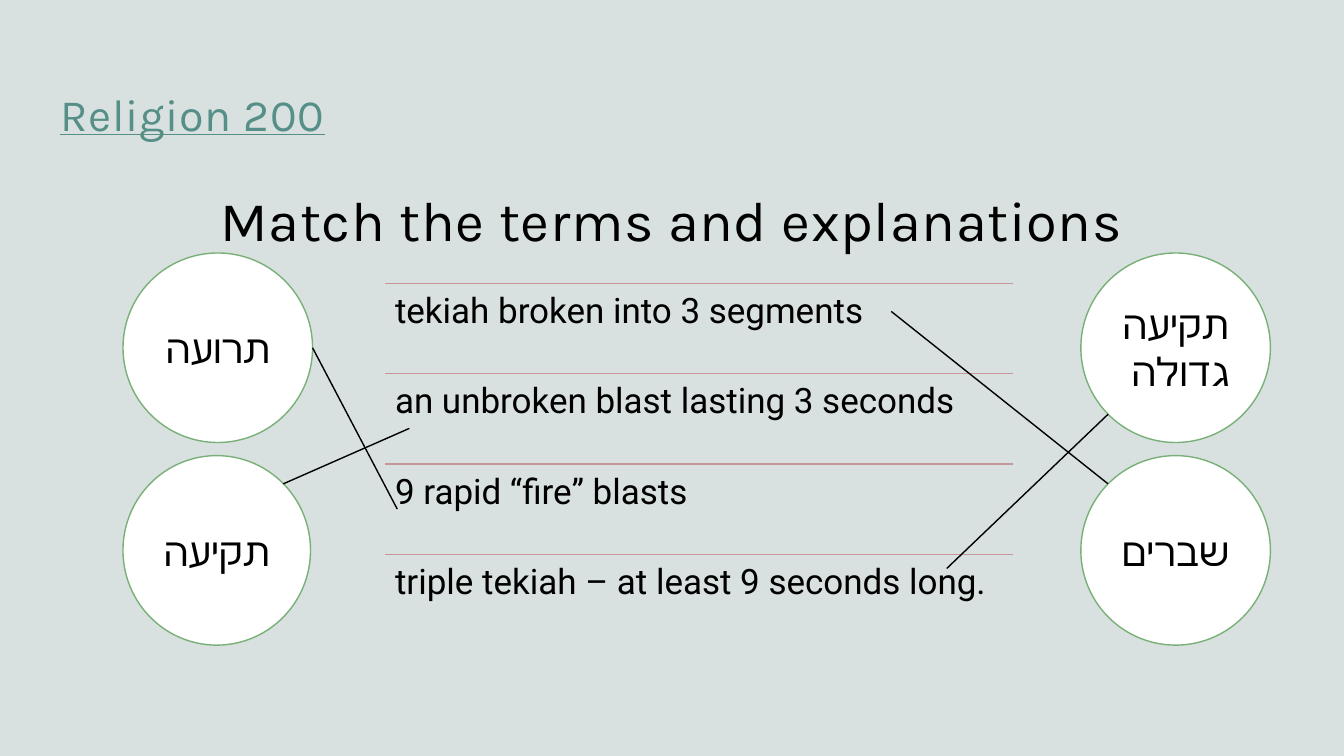
from pptx import Presentation
from pptx.dml.color import RGBColor
from pptx.enum.shapes import MSO_CONNECTOR, MSO_SHAPE
from pptx.enum.text import MSO_ANCHOR, PP_ALIGN
from pptx.oxml.ns import qn
from pptx.util import Inches, Pt
from lxml import etree

LEFT, CENTER = PP_ALIGN.LEFT, PP_ALIGN.CENTER
TOP, MIDDLE = MSO_ANCHOR.TOP, MSO_ANCHOR.MIDDLE
STRAIGHT, OVAL = MSO_CONNECTOR.STRAIGHT, MSO_SHAPE.OVAL
COLORS = {"back": "D8E1DF", "title": "568E88", "text": "000000",
          "circle": "FFFFFF", "outline": "79B078", "rule": "C6969B"}


class MatchingSlide:
    """Draws the elements of a matching exercise in one style."""

    def __init__(self, prs):
        self.s = prs.slides.add_slide(prs.slide_layouts[5])
        fill = self.s.background.fill
        fill.solid()
        fill.fore_color.rgb = self.color("back")

    def color(self, name):
        return RGBColor.from_string(COLORS[name])

    def set_text(self, sp, text, size, font, color="text", align=LEFT,
                 anchor=TOP, spacing=1.0, tracking=0, rtl=False):
        tf = sp.text_frame
        tf.word_wrap = True
        tf.vertical_anchor = anchor
        tf.text = text
        p = tf.paragraphs[0]
        p.alignment = align
        p.line_spacing = spacing
        if rtl:
            p._p.get_or_add_pPr().set("rtl", "1")
        r = p.runs[0]
        r.font.size = Pt(size)
        r.font.name = font
        r.font.color.rgb = self.color(color)
        rPr = r._r.get_or_add_rPr()
        if tracking:
            rPr.set("spc", str(tracking))
        if rtl:
            etree.SubElement(rPr, qn("a:cs")).set("typeface", font)
        return r

    def title(self, text, x, y, w, h):
        sp = self.s.shapes.title
        sp.left, sp.top, sp.width, sp.height = map(Inches, (x, y, w, h))
        r = self.set_text(sp, text, 32, "Karla", "title", anchor=MIDDLE, tracking=50)
        r.font.underline = True

    def text(self, text, x, y, w, h, size, font, inset=0.05, **style):
        sp = self.s.shapes.add_textbox(*map(Inches, (x, y, w, h)))
        tf = sp.text_frame
        tf.margin_top = tf.margin_bottom = Inches(inset)
        self.set_text(sp, text, size, font, **style)

    def circle(self, text, x, y, w, font="Roboto"):
        sp = self.s.shapes.add_shape(OVAL, *map(Inches, (x, y, w, 1.88)))
        sp.shadow.inherit = False
        sp.fill.solid()
        sp.fill.fore_color.rgb = self.color("circle")
        sp.line.color.rgb = self.color("outline")
        sp.line.width = Pt(1)
        self.set_text(sp, text, 28, font, align=CENTER, anchor=MIDDLE, rtl=True)

    def line(self, x1, y1, x2, y2, color="text"):
        sp = self.s.shapes.add_connector(STRAIGHT, *map(Inches, (x1, y1, x2, y2)))
        sp.line.color.rgb = self.color(color)
        sp.line.width = Pt(1)
        etree.SubElement(sp._element.spPr, qn("a:effectLst"))


def main():
    prs = Presentation()
    prs.slide_width, prs.slide_height = Inches(13.33), Inches(7.5)
    slide = MatchingSlide(prs)
    slide.title("Religion 200", 0.5, 0.4, 11.92, 1.45)
    slide.text("Match the terms and explanations", 0.5, 1.64, 12.33, 1, 40, "Karla",
               align=CENTER, anchor=MIDDLE, spacing=1.1, tracking=50)

    upper, lower, left, right = 2.51, 4.52, 1.22, 10.72
    slide.circle("שברים", right, lower, 1.88)
    slide.circle("תקיעה גדולה ", right, upper, 1.88)
    slide.circle("תרועה", left, upper, 1.88)
    slide.circle("תקיעה", left, lower, 1.86, "Calibri")

    explanations = ["tekiah broken into 3 segments",
                    "an unbroken blast lasting 3 seconds",
                    "9 rapid “fire” blasts",
                    "triple tekiah – at least 9 seconds long."]
    step = 2.69 / 3
    for i, explanation in enumerate(explanations):
        y = 2.81 + i * step
        slide.line(3.82, y, 10.05, y, "rule")
        slide.text(explanation, 3.82, y, 6.24, 0.9, 25, "Roboto",
                   inset=0.1, spacing=0.9)

    for match in [(9.39, 5.64, 10.99, 4.11), (2.81, 4.8, 4.06, 4.25),
                  (3.1, 3.45, 3.94, 5.05), (8.84, 3.09, 10.99, 4.8)]:
        slide.line(*match)
    prs.save("out.pptx")


if __name__ == "__main__":
    main()
